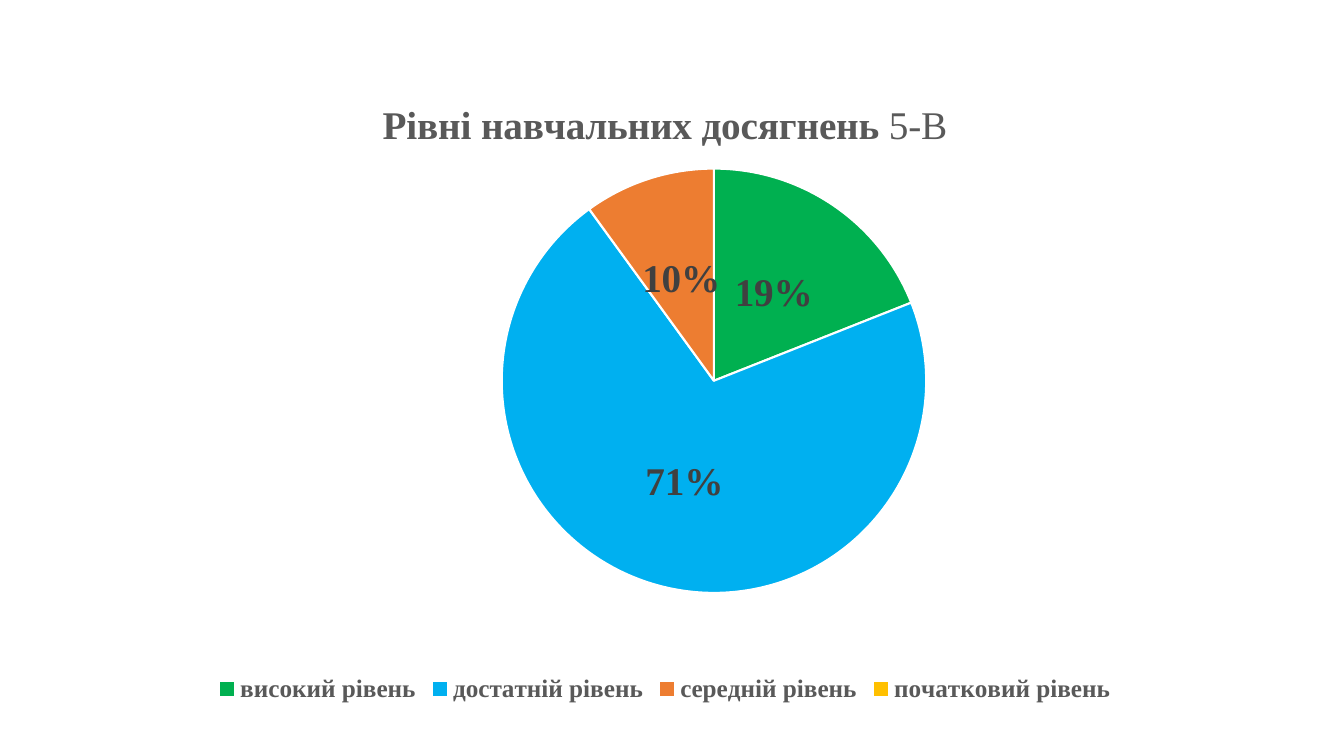
from pptx import Presentation
from pptx.chart.data import CategoryChartData
from pptx.dml.color import RGBColor
from pptx.enum.chart import XL_CHART_TYPE, XL_LABEL_POSITION, XL_LEGEND_POSITION
from pptx.util import Inches, Pt
from lxml.etree import SubElement
from pptx.oxml.ns import qn

COLORS = {
    "high": "00B050",
    "sufficient": "00B0F0",
    "average": "ED7D31",
    "initial": "FFC000",
    "border": "FFFFFF",
    "label": "404040",
    "text": "595959",
}
LEVELS = [
    ("високий рівень", 19, "high"),
    ("достатній рівень", 71, "sufficient"),
    ("середній рівень", 10, "average"),
    ("початковий рівень", None, "initial"),
]
PLOT_LAYOUT = {"x": 0.122, "y": 0.139, "w": 0.838, "h": 0.678}


def color(name):
    return RGBColor.from_string(COLORS[name])


def format_font(font, size, color_name="text", bold=True):
    font.name = "Times New Roman"
    font.size = Pt(size)
    font.bold = bold
    font.color.rgb = color(color_name)


def add_run(paragraph, text, **font_format):
    run = paragraph.add_run()
    run.text = text
    format_font(run.font, **font_format)


def set_plot_layout(chart, layout):
    """Place the inner plot area by fractions of the chart's size."""
    plot_area = chart.plots[0]._element.getparent()
    for automatic in plot_area.findall(qn("c:layout")):
        plot_area.remove(automatic)
    holder = SubElement(plot_area, qn("c:layout"))
    plot_area.insert(0, holder)
    manual = SubElement(holder, qn("c:manualLayout"))
    settings = [("layoutTarget", "inner"), ("xMode", "edge"), ("yMode", "edge")]
    for tag, value in settings + list(layout.items()):
        SubElement(manual, qn(f"c:{tag}")).set("val", str(value))


class LevelsSlide:
    def __init__(self, presentation):
        self.slide = presentation.slides.add_slide(presentation.slide_layouts[6])

    def add_pie(self, levels, left, top, width, height):
        data = CategoryChartData()
        data.categories = [name for name, _, _ in levels]
        data.add_series("Series 1", [value for _, value, _ in levels])
        chart = self.slide.shapes.add_chart(
            XL_CHART_TYPE.PIE, Inches(left), Inches(top),
            Inches(width), Inches(height), data).chart
        chart.font.name = "Calibri"
        chart.font.size = Pt(10)
        plot = chart.plots[0]
        plot.vary_by_categories = True
        for index, (_, _, color_name) in enumerate(levels):
            slice_format = plot.series[0].points[index].format
            slice_format.fill.solid()
            slice_format.fill.fore_color.rgb = color(color_name)
            slice_format.line.color.rgb = color("border")
            slice_format.line.width = Pt(1.5)
        set_plot_layout(chart, PLOT_LAYOUT)
        return chart

    def add_title(self, chart, parts):
        chart.has_title = True
        paragraph = chart.chart_title.text_frame.paragraphs[0]
        for text, bold in parts:
            add_run(paragraph, text, size=28, bold=bold)
        chart.chart_title.include_in_layout = False

    def add_percent_labels(self, chart):
        labels = chart.plots[0].series[0].data_labels
        labels.show_percentage = True
        labels.show_value = False
        labels.number_format = "0%"
        labels.number_format_is_linked = False
        labels.position = XL_LABEL_POSITION.CENTER
        format_font(labels.font, 28, "label")

    def add_legend(self, chart):
        chart.has_legend = True
        chart.legend.position = XL_LEGEND_POSITION.BOTTOM
        chart.legend.include_in_layout = False
        format_font(chart.legend.font, 18)


def main():
    presentation = Presentation()
    presentation.slide_width = Inches(13.33)
    presentation.slide_height = Inches(7.5)
    levels_slide = LevelsSlide(presentation)
    chart = levels_slide.add_pie(LEVELS, 0.66, 0.81, 11.87, 6.21)
    levels_slide.add_title(chart, [("Рівні навчальних досягнень ", True), ("5-В", False)])
    levels_slide.add_percent_labels(chart)
    levels_slide.add_legend(chart)
    presentation.save("out.pptx")


if __name__ == "__main__":
    main()
